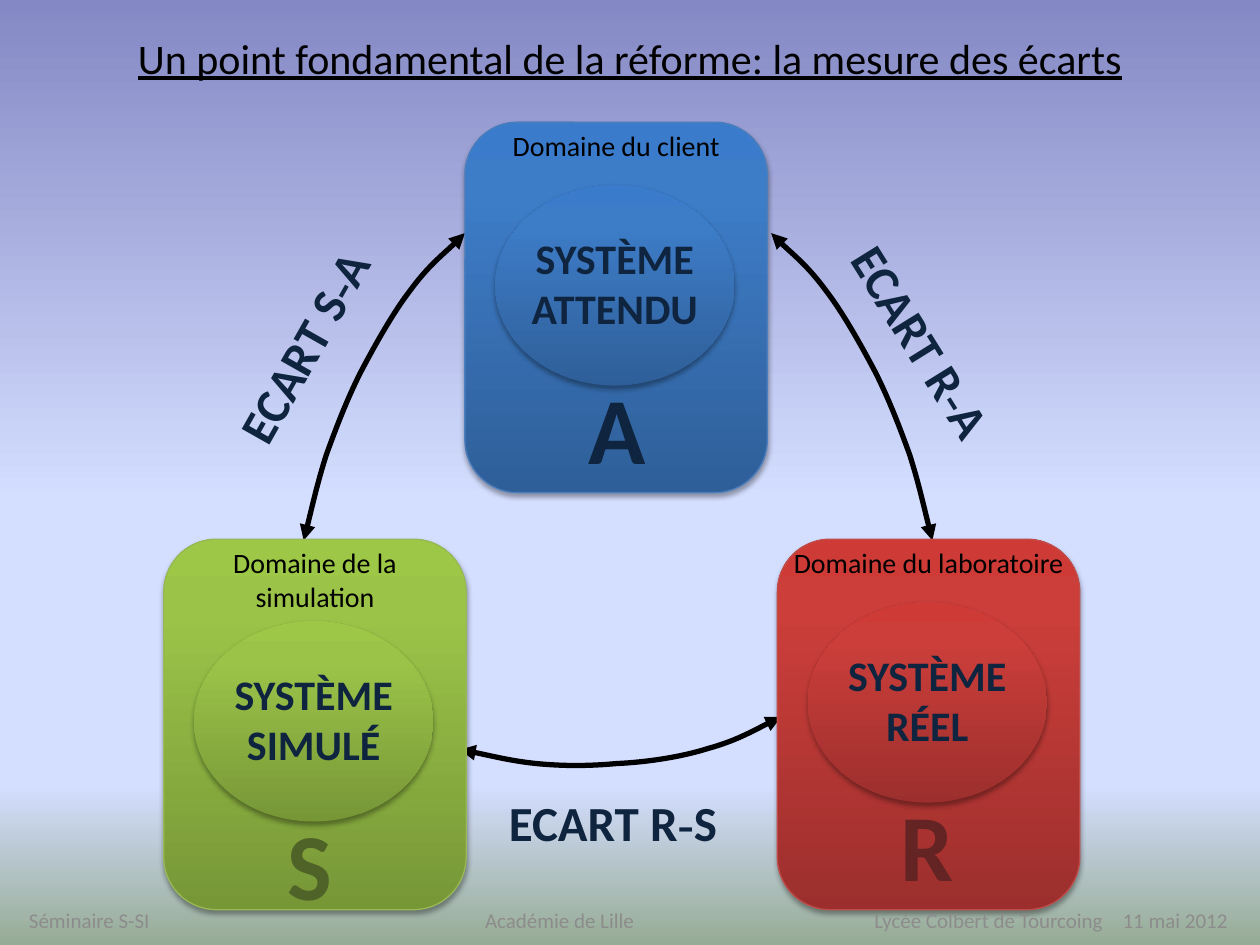
import lxml.etree
import pptx
import pptx.dml.color
import pptx.enum.shapes
import pptx.enum.text
import pptx.oxml.ns
import pptx.util

Inches, Pt = pptx.util.Inches, pptx.util.Pt
qn = pptx.oxml.ns.qn
KIND = pptx.enum.shapes.MSO_SHAPE
ALIGN = pptx.enum.text.PP_ALIGN
ANCHOR = pptx.enum.text.MSO_ANCHOR
NAVY, BLACK = "0F243E", "000000"


def color(code):
    return pptx.dml.color.RGBColor.from_string(code)


def add(parent, tag, **attrs):
    return lxml.etree.SubElement(parent, qn(tag), attrs)


def shade(fill, root, stops, angle):
    """Fill with a gradient of (percent, color) stops."""
    fill.gradient()
    fill.gradient_angle = angle
    group = next(root.iter(qn("a:gsLst")))
    for old in list(group):
        group.remove(old)
    for place, code in stops:
        stop = add(group, "a:gs", pos=str(place * 1000))
        add(stop, "a:srgbClr", val=code)


def write(slide, box, text, size, code=NAVY, bold=False, align=ALIGN.CENTER,
          anchor=ANCHOR.MIDDLE, wrap=True, after=10, turn=0):
    """Place one paragraph; a list of (text, font) pairs makes runs."""
    shape = slide.shapes.add_textbox(*map(Inches, box))
    shape.rotation = turn
    frame = shape.text_frame
    frame.word_wrap = wrap
    frame.vertical_anchor = anchor
    para = frame.paragraphs[0]
    para.alignment = align
    para.space_after = Pt(after)
    para.font.size = Pt(size)
    para.font.bold = bold
    para.font.color.rgb = color(code)
    if isinstance(text, str):
        para.text = text
        para.font.name = "Calibri"
    else:
        for part, face in text:
            run = para.add_run()
            run.text = part
            run.font.name = face
    return shape


def block(slide, kind, box, stops, edge=None):
    """Shaded shape with a soft shadow below."""
    shape = slide.shapes.add_shape(kind, *map(Inches, box))
    shade(shape.fill, shape.element, stops, 90)
    if edge:
        shape.line.color.rgb = color(edge)
        shape.line.width = Pt(0.75)
    else:
        shape.line.fill.background()
    shape.shadow.inherit = False
    effects = shape.element.spPr.find(qn("a:effectLst"))
    shadow = add(effects, "a:outerShdw", blurRad=str(Pt(3.1)),
                 dist=str(Pt(1.8)), dir="5400000", rotWithShape="0")
    tint = add(shadow, "a:srgbClr", val=BLACK)
    add(tint, "a:alpha", val="35000")
    return shape


def domain(slide, box, title, name, letter, drop, shades, edge, ink):
    """Rounded card: heading, oval with a system name, big letter."""
    left, top, width, height = box
    stops = list(zip((0, 80, 100), shades))
    card = block(slide, KIND.ROUNDED_RECTANGLE, box, stops, edge)
    card.adjustments[0] = 0.174
    write(slide, (left, top, width, 0.78), title, 16, BLACK,
          anchor=ANCHOR.TOP)
    oval = left + 0.24
    block(slide, KIND.OVAL, (oval, top + drop, 1.9, 1.59), stops)
    write(slide, (oval, top + drop + 0.3, 1.9, 0.95), name, 24, bold=True)
    write(slide, (left + 0.88, top + drop + 1.42, 0.52, 0.76), letter, 54,
          ink, bold=True, align=ALIGN.LEFT, anchor=ANCHOR.TOP, wrap=False)


def arc(slide, points):
    """Double-headed curve: a start point, then three points per curve."""
    spots = [(Inches(x), Inches(y)) for x, y in points]
    draft = slide.shapes.build_freeform(*spots[0])
    draft.add_line_segments(spots[1:], close=False)
    shape = draft.convert_to_shape()
    shape.shadow.inherit = False
    shape.fill.background()
    shape.line.color.rgb = color(BLACK)
    shape.line.width = Pt(3)
    line = shape.element.spPr.find(qn("a:ln"))
    add(line, "a:headEnd", type="triangle")
    add(line, "a:tailEnd", type="triangle")
    # Turn each three straight steps into one Bezier curve
    route = next(shape.element.iter(qn("a:path".replace(" ", ""))))
    steps = route.findall(qn("a:lnTo"))
    for index in range(0, len(steps), 3):
        curve = add(route, "a:cubicBezTo")
        for step in steps[index:index + 3]:
            curve.append(step[0])
            route.remove(step)


def gap(slide, box, pair, turn=0):
    """Caption of the gap between two domains."""
    first, last = pair
    parts = [("ECART " + first, "Calibri"), ("-", "Times New Roman"),
             (last, "Calibri")]
    write(slide, box, parts, 28, bold=True, turn=turn)


def footer(slide, box):
    """One line of four parts, set on tab stops."""
    parts = ("Séminaire S-SI", "Académie de Lille",
             "Lycée Colbert de Tourcoing", "11 mai 2012")
    shape = write(slide, box, "\t".join(parts), 12, "8C8C8C",
                  align=ALIGN.LEFT, after=0)
    frame = shape.text_frame
    frame.margin_left, frame.margin_right = Inches(0.23), 0
    props = frame.paragraphs[0].font._element.getparent()
    tabs = lxml.etree.Element(qn("a:tabLst"))
    for stop in (3.62, 6.71, 8.68):
        add(tabs, "a:tab", pos=str(Inches(stop)), algn="l")
    props.find(qn("a:defRPr")).addprevious(tabs)


def main():
    deck = pptx.Presentation()
    deck.slide_width, deck.slide_height = Inches(10), Inches(7.5)
    slide = deck.slides.add_slide(deck.slide_layouts[6])
    shade(slide.background.fill, slide.element,
          [(0, "8488C4"), (53, "D4DEFF"), (83, "D4DEFF"), (100, "96AB94")],
          270)

    # Title
    title = write(slide, (0, 0, 10, 0.91),
                  "Un point fondamental de la réforme: la mesure des écarts",
                  24, BLACK, after=0)
    title.text_frame.paragraphs[0].font.underline = True

    # Arrows: the left one mirrors the right one
    right = [(6.12, 1.85), (6.19, 1.93), (6.41, 2.11), (6.55, 2.3),
             (6.69, 2.48), (6.84, 2.75), (6.95, 2.96),
             (7.06, 3.18), (7.14, 3.39), (7.22, 3.61),
             (7.29, 3.83), (7.36, 4.14), (7.4, 4.29)]
    low = [(6.2, 5.69), (6.11, 5.73), (5.84, 5.88), (5.62, 5.94),
           (5.4, 6.01), (5.12, 6.05), (4.89, 6.06),
           (4.67, 6.08), (4.47, 6.08), (4.26, 6.06),
           (4.06, 6.04), (3.78, 5.97), (3.65, 5.95)]
    for points in (right, [(9.81 - x, y) for x, y in right], low):
        arc(slide, points)

    # Gap captions
    gap(slide, (5.37, 2.47, 3.9, 0.48), "RA", 58.1)
    gap(slide, (1.22, 2.51, 2.38, 0.48), "SA", 299.5)
    gap(slide, (3.85, 6.24, 2.03, 0.56), "RS")

    # Domains
    size = (2.4, 2.94)
    domain(slide, (3.69, 0.97, *size), "Domaine du client",
           "SYSTÈME\vATTENDU", "A", 0.5,
           ("2F5F99", "3D7CC7", "3A7CCB"), "4B7EBC", NAVY)
    domain(slide, (1.3, 4.28, *size), "Domaine de la simulation",
           "SYSTÈME\vSIMULÉ", "S", 0.65,
           ("779737", "9BC348", "9DC746"), "98B955", "4F6228")
    domain(slide, (6.17, 4.28, *size), "Domaine du laboratoire",
           "SYSTÈME\vRÉEL", "R", 0.5,
           ("9C2F2D", "CB3E3A", "CE3B37"), "BF4C48", "632423")

    footer(slide, (0, 7.1, 10, 0.4))
    deck.save("out.pptx")


if __name__ == "__main__":
    main()
